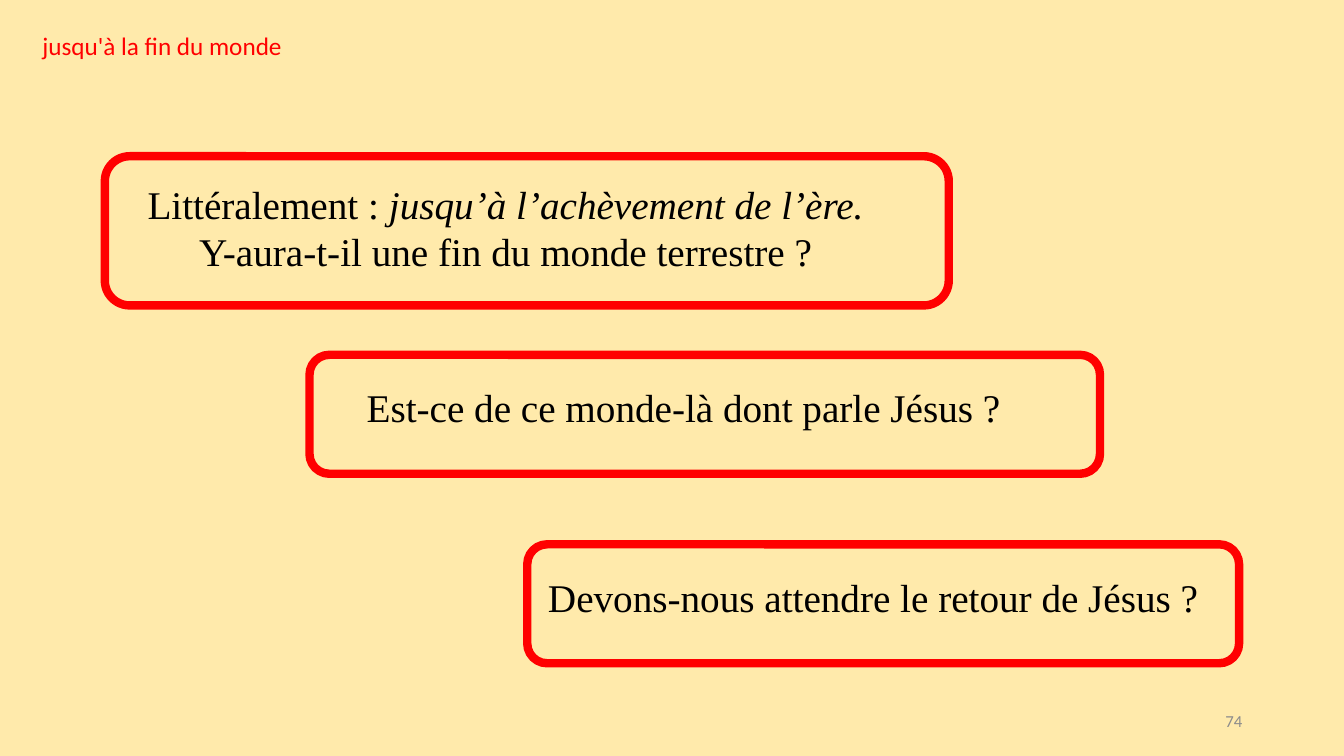
from pptx import Presentation
from pptx.dml.color import RGBColor
from pptx.enum import shapes, text
from pptx.util import Inches, Pt

COLORS = {"background": "FFEAAB", "accent": "FF0000", "body": "000000", "number": "8C8C8C"}

QUESTIONS = [
    ((1.04, 1.55, 8.37, 1.48), (1.1, 1.74, 7.83, 1.04),
     [[("Littéralement : ", False), ("jusqu’à l’achèvement de l’ère.", True)],
      [("Y-aura-t-il une fin du monde terrestre ?", False)]]),
    ((3.07, 3.52, 7.84, 1.18), (3.45, 3.75, 6.66, 0.57),
     [[("Est-ce de ce monde-là dont parle Jésus ?", False)]]),
    ((5.23, 5.4, 7.06, 1.18), (5.13, 5.64, 7.06, 0.57),
     [[("Devons-nous attendre le retour de Jésus ?", False)]]),
]


def color(name):
    return RGBColor.from_string(COLORS[name])


def write(holder, lines, font="Calibri", size=18, ink="body",
          align=text.PP_ALIGN.LEFT, anchor=text.MSO_ANCHOR.TOP):
    frame = holder.text_frame
    frame.word_wrap = True
    frame.auto_size = text.MSO_AUTO_SIZE.NONE
    frame.vertical_anchor = anchor
    for index, line in enumerate(lines):
        paragraph = frame.add_paragraph() if index else frame.paragraphs[0]
        paragraph.alignment = align
        for wording, italic in line:
            run = paragraph.add_run()
            run.text = wording
            run.font.name = font
            run.font.size = Pt(size)
            run.font.italic = italic
            run.font.color.rgb = color(ink)


def add_title(slide, wording):
    title = slide.shapes.title
    title.left, title.top = Inches(0.32), Inches(0.25)
    title.width, title.height = Inches(2.6), Inches(0.4)
    write(title, [[(wording, False)]], ink="accent")


def add_text(slide, place, lines, **style):
    write(slide.shapes.add_textbox(*map(Inches, place)), lines, **style)


def add_frame(slide, place):
    frame = slide.shapes.add_shape(shapes.MSO_SHAPE.ROUNDED_RECTANGLE, *map(Inches, place))
    frame.shadow.inherit = False
    frame.fill.background()
    frame.line.color.rgb = color("accent")
    frame.line.width = Pt(6)


def main():
    deck = Presentation()
    deck.slide_width, deck.slide_height = Inches(13.33), Inches(7.5)
    slide = deck.slides.add_slide(deck.slide_layouts[5])
    slide.background.fill.solid()
    slide.background.fill.fore_color.rgb = color("background")

    add_title(slide, "jusqu'à la fin du monde")
    for frame_place, text_place, lines in QUESTIONS:
        add_frame(slide, frame_place)
        add_text(slide, text_place, lines, font="Times New Roman", size=28,
                 align=text.PP_ALIGN.CENTER)
    add_text(slide, (9.42, 6.95, 3, 0.4), [[("74", False)]], size=12, ink="number",
             align=text.PP_ALIGN.RIGHT, anchor=text.MSO_ANCHOR.MIDDLE)
    deck.save("out.pptx")


if __name__ == "__main__":
    main()
